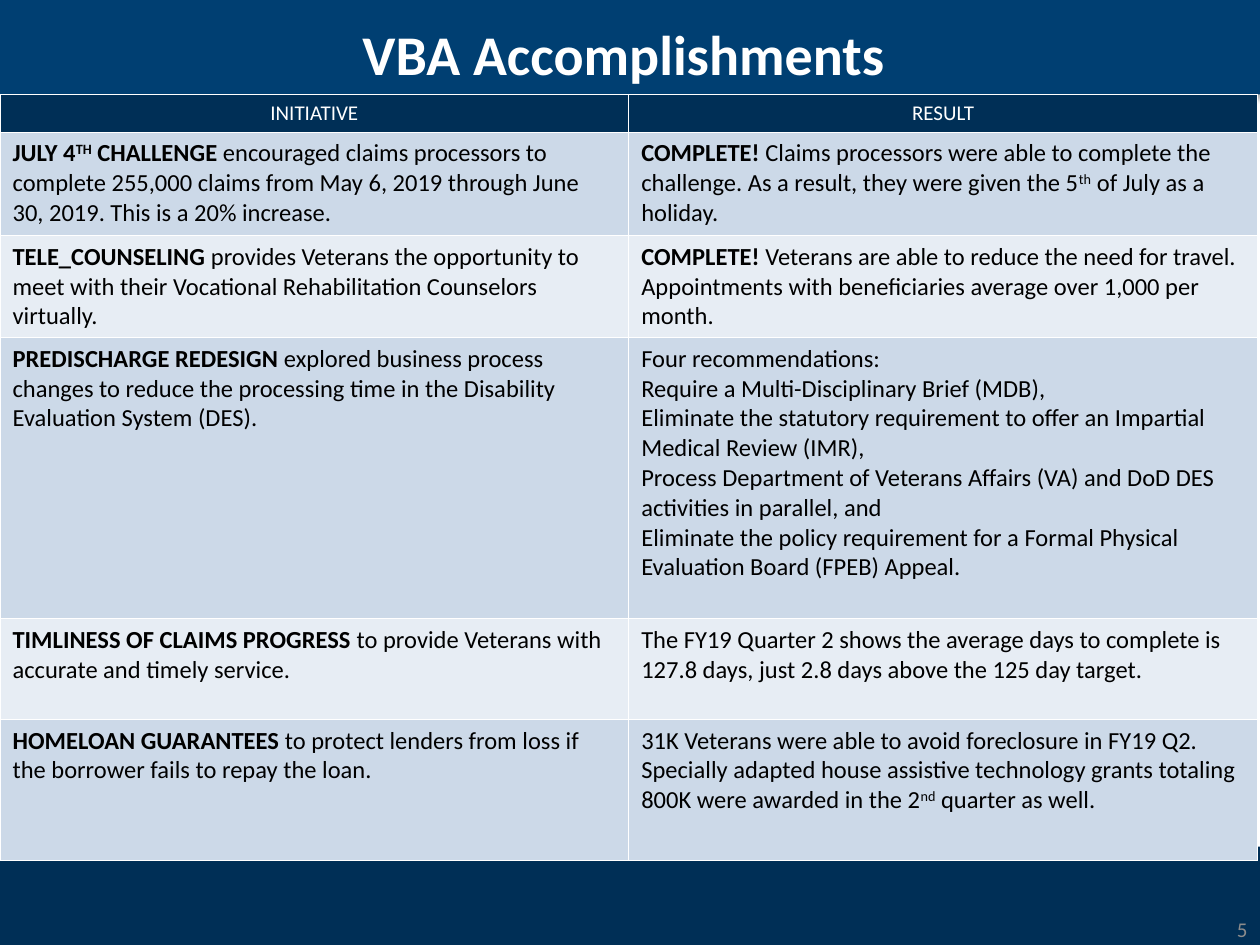
import pptx
import pptx.dml.color
import pptx.enum.shapes
import pptx.enum.text
import pptx.oxml
import pptx.oxml.ns
import pptx.util

W, H = 10, 7.5
FONT = "Calibri"
COLORS = {"navy": "002F56", "blue": "003F72", "white": "FFFFFF", "black": "000000",
          "odd": "CCD9E8", "even": "E7EDF4", "number": "8C8C8C"}
ALIGN = pptx.enum.text.PP_ALIGN
MIDDLE = pptx.enum.text.MSO_ANCHOR.MIDDLE

HEADINGS = ["INITIATIVE", "RESULT"]
ROW_HEIGHTS = [0.3, 0.82, 0.81, 2.23, 0.8, 1.12]
# Each cell is a list of paragraphs; ** switches bold and ^ switches superscript.
ROWS = [
    (["**JULY 4^TH^ CHALLENGE **encouraged claims processors to complete 255,000 claims "
      "from May 6, 2019 through June 30, 2019. This is a 20% increase."],
     ["**COMPLETE! **Claims processors were able to complete the challenge. As a result, "
      "they were given the 5^th^ of July as a holiday."]),
    (["**TELE_COUNSELING **provides Veterans the opportunity to meet with their "
      "Vocational Rehabilitation Counselors virtually."],
     ["**COMPLETE! **Veterans are able to reduce the need for travel. Appointments with "
      "beneficiaries average over 1,000 per month."]),
    (["**PREDISCHARGE REDESIGN **explored business process changes to reduce the "
      "processing time in the Disability Evaluation System (DES)."],
     ["Four recommendations:",
      "Require a Multi-Disciplinary Brief (MDB),",
      "Eliminate the statutory requirement to offer an Impartial Medical Review (IMR),",
      "Process Department of Veterans Affairs (VA) and DoD DES activities in parallel, and",
      "Eliminate the policy requirement for a Formal Physical Evaluation Board (FPEB) "
      "Appeal."]),
    (["**TIMLINESS OF CLAIMS PROGRESS **to provide Veterans with accurate and timely "
      "service."],
     ["The FY19 Quarter 2 shows the average days to complete is 127.8 days, just 2.8 days "
      "above the 125 day target."]),
    (["**HOMELOAN GUARANTEES **to protect lenders from loss if the borrower fails to "
      "repay the loan."],
     ["31K Veterans were able to avoid foreclosure in FY19 Q2. Specially adapted house "
      "assistive technology grants totaling 800K were awarded in the 2^nd^ quarter as "
      "well."]),
]


def rgb(name):
    return pptx.dml.color.RGBColor.from_string(COLORS[name])


def box(left, top, width, height):
    """Turn shares of the slide's size into lengths."""
    return [pptx.util.Inches(v) for v in (left * W, top * H, width * W, height * H)]


def format_paragraph(p, size, color, align=ALIGN.LEFT, bold=None):
    p.alignment = align
    p.font.name = FONT
    p.font.size = pptx.util.Pt(size)
    p.font.color.rgb = rgb(color)
    p.font.bold = bold


def add_band(s, top, height, color):
    sp = s.shapes.add_shape(pptx.enum.shapes.MSO_SHAPE.RECTANGLE, *box(0, top, 1, height))
    sp.shadow.inherit = False
    sp.fill.solid()
    sp.fill.fore_color.rgb = rgb(color)
    sp.line.fill.background()
    return sp


def add_soft_shadow(sp):
    effects = sp.element.spPr.find(pptx.oxml.ns.qn("a:effectLst"))
    effects.append(pptx.oxml.parse_xml(
        f'<a:outerShdw {pptx.oxml.ns.nsdecls("a")} blurRad="40000" dist="23000" '
        'dir="5400000" rotWithShape="0"><a:srgbClr val="000000">'
        '<a:alpha val="35000"/></a:srgbClr></a:outerShdw>'))


def add_title(s, text):
    title = s.shapes.title
    title.left, title.top, title.width, title.height = box(0.05, 0, 0.9, 0.113)
    tf = title.text_frame
    tf.text = text
    tf.auto_size = pptx.enum.text.MSO_AUTO_SIZE.NONE
    tf.vertical_anchor = MIDDLE
    format_paragraph(tf.paragraphs[0], 32, "white", ALIGN.CENTER, True)
    title.element.getparent().append(title.element)  # bring to front


def add_slide_number(s, number):
    tf = s.shapes.add_textbox(*box(0.767, 0.957, 0.233, 0.053)).text_frame
    tf.word_wrap = True
    tf.vertical_anchor = MIDDLE
    tf.text = number
    format_paragraph(tf.paragraphs[0], 12, "number", ALIGN.RIGHT)


def add_marked_runs(p, text):
    for i, part in enumerate(text.split("**")):
        for j, piece in enumerate(part.split("^")):
            if piece:
                r = p.add_run()
                r.text = piece
                r.font.bold = i % 2 == 1
                if j % 2:
                    r.font._element.set("baseline", "30000")


def fill_cell(cell, paragraphs, fill, size, color, align):
    cell.fill.solid()
    cell.fill.fore_color.rgb = rgb(fill)
    tf = cell.text_frame
    for i, text in enumerate(paragraphs):
        p = tf.add_paragraph() if i else tf.paragraphs[0]
        add_marked_runs(p, text)
        format_paragraph(p, size, color, align)


def add_results_table(s):
    table = s.shapes.add_table(len(ROW_HEIGHTS), len(HEADINGS),
                               *box(0, 0.1, 0.998, sum(ROW_HEIGHTS) / H)).table
    for row, height in zip(table.rows, ROW_HEIGHTS):
        row.height = pptx.util.Inches(height)
    for c, heading in enumerate(HEADINGS):
        fill_cell(table.cell(0, c), [heading], "navy", 12, "white", ALIGN.CENTER)
    for r, cells in enumerate(ROWS, start=1):
        for c, paragraphs in enumerate(cells):
            fill_cell(table.cell(r, c), paragraphs, "odd" if r % 2 else "even",
                      14, "black", ALIGN.LEFT)


def main():
    prs = pptx.Presentation()
    prs.slide_width, prs.slide_height = pptx.util.Inches(W), pptx.util.Inches(H)
    s = prs.slides.add_slide(prs.slide_layouts[5])
    add_band(s, 0.896, 0.104, "navy")
    add_soft_shadow(add_band(s, 0, 0.1, "blue"))
    add_slide_number(s, "5")
    add_results_table(s)
    add_title(s, "VBA Accomplishments ")
    prs.save("out.pptx")


if __name__ == "__main__":
    main()
